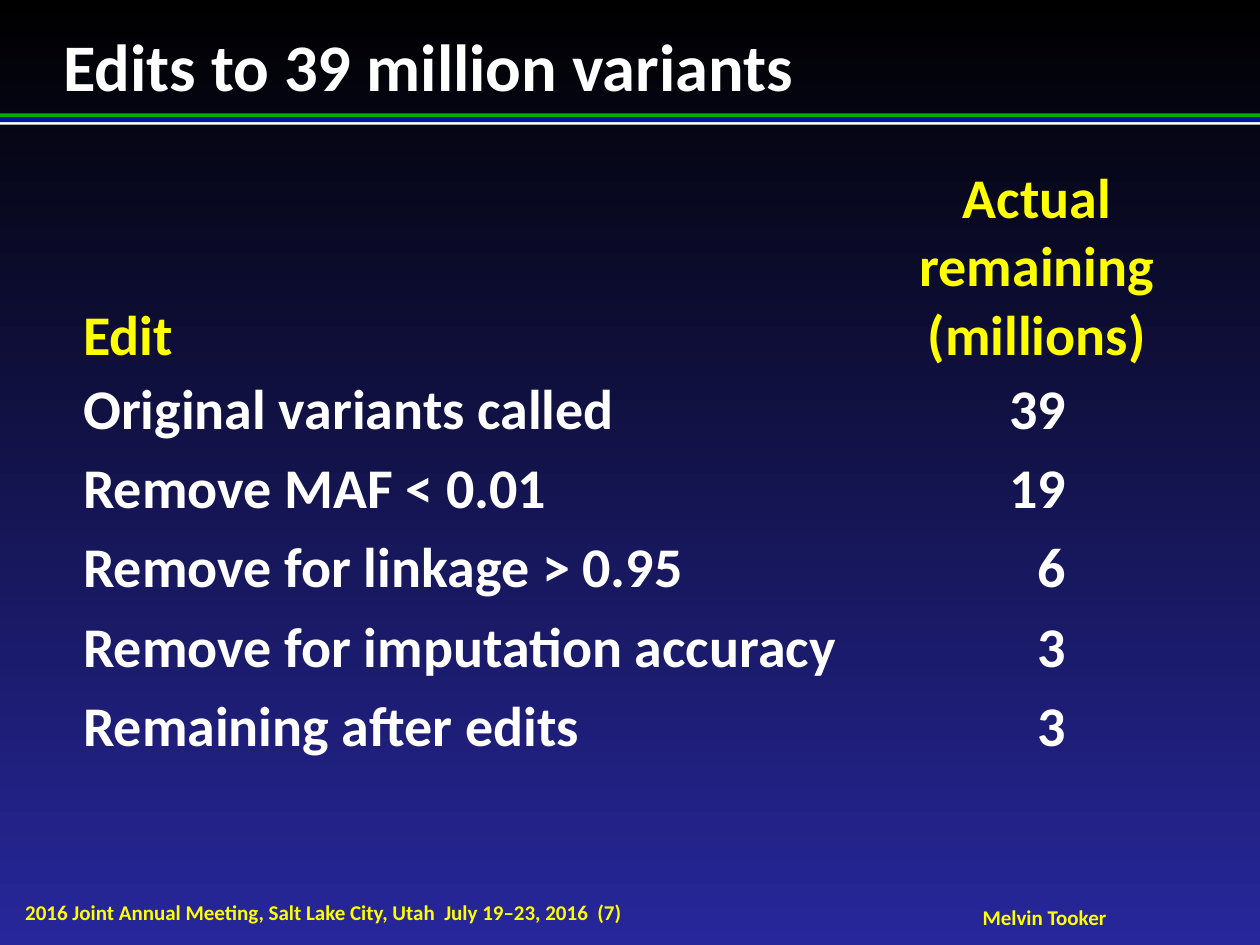
import pptx
import pptx.dml.color
import pptx.enum.shapes
import pptx.enum.text
import pptx.oxml.ns
import pptx.util

Inches = pptx.util.Inches
Align = pptx.enum.text.PP_ALIGN
Anchor = pptx.enum.text.MSO_ANCHOR

COLORS = {
    "top": "000000",
    "bottom": "27279B",
    "green": "01AF00",
    "blue": "001799",
    "white": "FFFFFF",
    "yellow": "FFFF00",
}
NO_STYLE_NO_GRID = "{2D5ABB26-0587-4C30-8999-92F81FD0307C}"

HEADER = ("Edit", "Actual remaining (millions)")
EDITS = [
    ("Original variants called", "39"),
    ("Remove MAF < 0.01", "19"),
    ("Remove for linkage > 0.95", "6"),
    ("Remove for imputation accuracy", "3"),
    ("Remaining after edits", "3"),
]


def rgb(name):
    return pptx.dml.color.RGBColor.from_string(COLORS[name])


def write_text(frame, text, size=32, color="white", align=Align.LEFT):
    paragraph = frame.paragraphs[0]
    paragraph.alignment = align
    run = paragraph.add_run()
    run.text = text
    run.font.name = "Calibri"
    run.font.size = pptx.util.Pt(size)
    run.font.bold = True
    run.font.color.rgb = rgb(color)


def clear_margins(frame):
    frame.margin_left = frame.margin_right = 0
    frame.margin_top = frame.margin_bottom = 0


def paint_background(slide):
    fill = slide.background.fill
    fill.gradient()
    fill.gradient_angle = 270
    for stop, position, color in zip(fill.gradient_stops, (0, 1), ("top", "bottom")):
        stop.position = position
        stop.color.rgb = rgb(color)


def add_title(slide, left, top, width, height):
    title = slide.shapes.title
    title.left, title.top = Inches(left), Inches(top)
    title.width, title.height = Inches(width), Inches(height)
    frame = title.text_frame
    clear_margins(frame)
    frame.vertical_anchor = Anchor.TOP
    frame.auto_size = pptx.enum.text.MSO_AUTO_SIZE.NONE
    write_text(frame, "Edits to 39 million variants", size=38)


def add_title_rule(slide, left, top, width):
    # Three stacked stripes, the blue one over the white one
    stripes = [("green", 0, 0.03), ("white", 0.06, 0.03), ("blue", 0.03, 0.04)]
    for color, offset, height in stripes:
        stripe = slide.shapes.add_shape(
            pptx.enum.shapes.MSO_SHAPE.RECTANGLE,
            Inches(left), Inches(top + offset), Inches(width), Inches(height))
        stripe.shadow.inherit = False
        stripe.fill.solid()
        stripe.fill.fore_color.rgb = rgb(color)
        stripe.line.fill.background()


def add_edits_table(slide, left, top, width, height):
    row_height = 0.63
    number_width = 2.36
    table = slide.shapes.add_table(
        len(EDITS) + 1, 2,
        Inches(left), Inches(top), Inches(width), Inches(height)).table
    table.first_row = table.horz_banding = False
    style = table._tbl.tblPr.find(pptx.oxml.ns.qn("a:tableStyleId"))
    style.text = NO_STYLE_NO_GRID

    table.columns[0].width = Inches(width - number_width)
    table.columns[1].width = Inches(number_width)
    for row in table.rows:
        row.height = Inches(row_height)
    table.rows[0].height = Inches(height - row_height * len(EDITS))

    for row_index, texts in enumerate([HEADER] + EDITS):
        is_header = row_index == 0
        number_align = Align.CENTER if is_header else Align.RIGHT
        for column, text in enumerate(texts):
            is_number = column == 1 and not is_header
            cell = table.cell(row_index, column)
            cell.fill.background()
            cell.vertical_anchor = Anchor.BOTTOM if is_header else Anchor.MIDDLE
            cell.margin_top = cell.margin_bottom = 0
            cell.margin_left = Inches(0.08 if is_number else 0.07)
            cell.margin_right = Inches(0.95 if is_number else 0.07)
            write_text(cell.text_frame, text,
                       color="yellow" if is_header else "white",
                       align=number_align if column == 1 else Align.LEFT)


def add_footer(slide, text, left, top, width, height, align=Align.LEFT, wrap=True):
    box = slide.shapes.add_textbox(
        Inches(left), Inches(top), Inches(width), Inches(height))
    frame = box.text_frame
    clear_margins(frame)
    frame.word_wrap = wrap
    frame.vertical_anchor = Anchor.MIDDLE
    write_text(frame, text, size=12, color="yellow", align=align)


def main():
    presentation = pptx.Presentation()
    presentation.slide_width = Inches(10)
    presentation.slide_height = Inches(7.5)
    slide = presentation.slides.add_slide(presentation.slide_layouts[5])

    paint_background(slide)
    # Heading
    add_title_rule(slide, 0, 0.9, 10)
    add_title(slide, 0.5, 0.2, 9, 0.64)
    # Body
    add_edits_table(slide, 0.59, 1.31, 8.82, 4.41)
    # Footer
    add_footer(slide,
               "2016 Joint Annual Meeting, Salt Lake City, Utah  July 19–23, 2016  (7)",
               0.2, 7.14, 7.11, 0.2)
    add_footer(slide, "Melvin Tooker", 7.79, 7.18, 1, 0.2,
               align=Align.CENTER, wrap=False)

    presentation.save("out.pptx")


if __name__ == "__main__":
    main()
